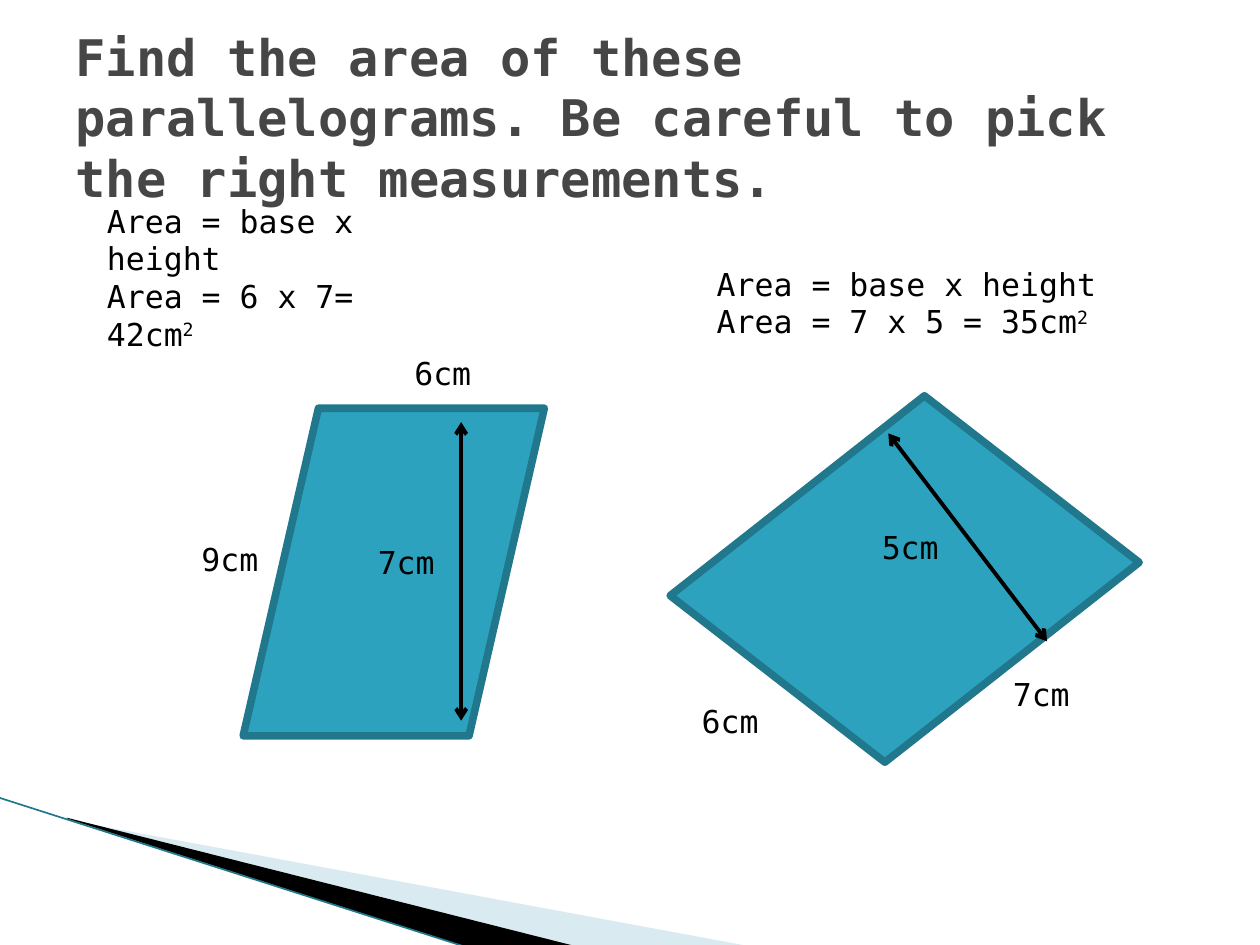
from dataclasses import dataclass
from typing import NamedTuple

from lxml.etree import SubElement
from pptx import Presentation
from pptx.dml.color import RGBColor
from pptx.enum.shapes import MSO_CONNECTOR as Conn, MSO_SHAPE as Shp
from pptx.enum.text import MSO_ANCHOR as Anchor, MSO_AUTO_SIZE as Fit, PP_ALIGN as Align
from pptx.oxml.ns import qn
from pptx.util import Inches, Pt


@dataclass(frozen=True)
class Theme:
    font: str = "DejaVu Sans Mono"
    title: RGBColor = RGBColor(0x46, 0x46, 0x46)
    ink: RGBColor = RGBColor(0, 0, 0)
    fill: RGBColor = RGBColor(0x2D, 0xA2, 0xBF)
    edge: RGBColor = RGBColor(0x21, 0x78, 0x8D)
    pale: RGBColor = RGBColor(0xA0, 0xCB, 0xDC)
    title_size: float = 28.8
    body_size: float = 18
    edge_width: float = 4.33
    arrow_width: float = 2.25
    rule_width: float = 0.95


class Wedge(NamedTuple):
    points: list
    color: RGBColor
    opacity: int


class Figure(NamedTuple):
    box: tuple
    rotation: float


class Rule(NamedTuple):
    start: tuple
    end: tuple
    color: RGBColor
    width: float
    arrows: bool


class Label(NamedTuple):
    left: float
    top: float
    lines: list
    width: float = 1.1
    height: float = 0.4


T = Theme()
WEDGES = [
    Wedge([(0.55, 6.51), (5.95, 7.51), (4.56, 7.51), (0.55, 6.5)], T.pale, 40),
    Wedge([(0.53, 6.49), (4.57, 7.51), (3.72, 7.52), (0.54, 6.5)], T.ink, 100),
]
FIGURES = [
    Figure((1.93, 3.24, 2.39, 2.6), 0),
    Figure((5.79, 3.35, 2.78, 2.49), 37.8),
]
EDGE_RULE = Rule((-0.01, 6.33), (3.71, 7.52), T.edge, T.rule_width, False)
HEIGHTS = [
    Rule((3.66, 3.35), (3.66, 5.72), T.ink, T.arrow_width, True),
    Rule((7.05, 3.44), (8.31, 5.09), T.ink, T.arrow_width, True),
]
FORMULA = ("Area = base x height", "")
LABELS = [
    Label(3.19, 2.76, [("6cm", "")]),
    Label(2.9, 4.26, [("7cm", "")]),
    Label(5.47, 5.52, [("6cm", "")]),
    Label(7.94, 5.31, [("7cm", "")]),
    Label(0.75, 1.55, [FORMULA, ("Area = 6 x 7= 42cm", "2")], 2.99, 1.01),
    Label(5.59, 2.05, [FORMULA, ("Area = 7 x 5 = 35cm", "2")], 3.73, 1.01),
    Label(1.5, 4.24, [("9cm", "")]),
    Label(6.9, 4.14, [("5cm", "")]),
]


def set_attrs(obj, values: dict) -> None:
    """Set each named attribute on obj."""
    for name, value in values.items():
        setattr(obj, name, value)


def style_run(r, size: float, color: RGBColor, bold: bool = False) -> None:
    """Give a run its font, size and colour."""
    set_attrs(r.font, {"name": T.font, "size": Pt(size), "bold": bold})
    r.font.color.rgb = color


def draw_wedge(s, wedge: Wedge) -> None:
    """Draw one filled corner wedge."""
    points = [(Inches(x), Inches(y)) for x, y in wedge.points]
    builder = s.shapes.build_freeform(*points[0])
    builder.add_line_segments(points[1:], close=True)
    sp = builder.convert_to_shape()
    sp.shadow.inherit = False
    sp.fill.solid()
    sp.fill.fore_color.rgb = wedge.color
    sp.line.fill.background()
    if wedge.opacity < 100:
        color = sp.element.spPr.find(qn("a:solidFill"))[0]
        SubElement(color, qn("a:alpha")).set("val", str(wedge.opacity * 1000))


def draw_figure(s, figure: Figure) -> None:
    """Draw one parallelogram."""
    sp = s.shapes.add_shape(Shp.PARALLELOGRAM, *map(Inches, figure.box))
    sp.rotation = figure.rotation
    sp.shadow.inherit = False
    sp.fill.solid()
    sp.fill.fore_color.rgb = T.fill
    sp.line.color.rgb = T.edge
    sp.line.width = Pt(T.edge_width)


def draw_rule(s, rule: Rule) -> None:
    """Draw a straight line, with arrowheads at both ends if asked."""
    ends = map(Inches, rule.start + rule.end)
    line = s.shapes.add_connector(Conn.STRAIGHT, *ends)
    line.line.color.rgb = rule.color
    line.line.width = Pt(rule.width)
    if rule.arrows:
        ln = line.line._get_or_add_ln()
        for tag in ("a:headEnd", "a:tailEnd"):
            SubElement(ln, qn(tag)).set("type", "arrow")
    SubElement(line.element.spPr, qn("a:effectLst"))


def draw_label(s, label: Label) -> None:
    """Write a text box whose lines may end in a superscript."""
    box = (label.left, label.top, label.width, label.height)
    tf = s.shapes.add_textbox(*map(Inches, box)).text_frame
    set_attrs(tf, {"word_wrap": True, "auto_size": Fit.SHAPE_TO_FIT_TEXT})
    for i, (text, power) in enumerate(label.lines):
        p = tf.add_paragraph() if i else tf.paragraphs[0]
        for part, baseline in ((text, 0), (power, 30000)):
            if part:
                r = p.add_run()
                r.text = part
                style_run(r, T.body_size, T.ink)
                if baseline:
                    r.font._element.set("baseline", str(baseline))


def write_title(s, text: str) -> None:
    """Place and format the title placeholder."""
    sp = s.shapes.title
    box = {"left": 0.5, "top": 0.3, "width": 9, "height": 1.25}
    set_attrs(sp, {name: Inches(v) for name, v in box.items()})
    tf = sp.text_frame
    set_attrs(tf, {"word_wrap": True, "auto_size": Fit.NONE,
                   "vertical_anchor": Anchor.MIDDLE})
    p = tf.paragraphs[0]
    p.alignment = Align.LEFT
    r = p.add_run()
    r.text = text
    style_run(r, T.title_size, T.title, bold=True)


def main() -> None:
    """Build the slide and save it."""
    prs = Presentation()
    set_attrs(prs, {"slide_width": Inches(10), "slide_height": Inches(7.5)})
    s = prs.slides.add_slide(prs.slide_layouts[5])
    write_title(s, "Find the area of these parallelograms. "
                   "Be careful to pick the right measurements.")
    for wedge in WEDGES:
        draw_wedge(s, wedge)
    draw_rule(s, EDGE_RULE)
    for figure in FIGURES:
        draw_figure(s, figure)
    for height in HEIGHTS:
        draw_rule(s, height)
    for label in LABELS:
        draw_label(s, label)
    prs.save("out.pptx")


if __name__ == "__main__":
    main()
